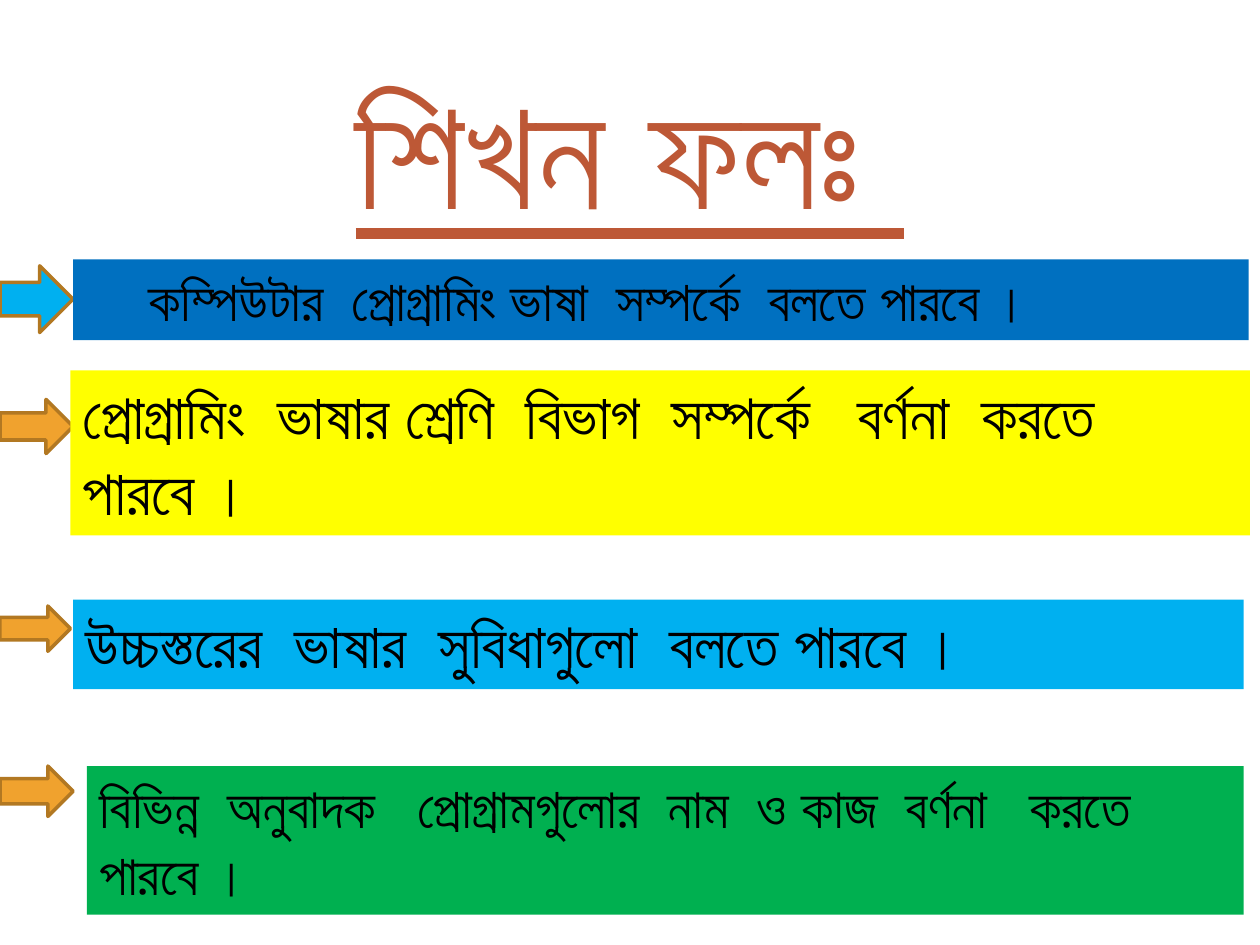
import pptx
import pptx.dml.color
import pptx.enum.shapes
import pptx.enum.text
import pptx.util

COLUMNS, ROWS = 100, 75
SLIDE_WIDTH = pptx.util.Inches(10)
SLIDE_HEIGHT = pptx.util.Inches(7.5)
ORANGE = "F0A22E"
BROWN = "B27822"
BLACK = "000000"

OUTCOMES = [
    {"arrow": (0, 21.1, 5.8, 5.3), "arrow_color": "00B0F0",
     "box": (5.8, 20.6, 93.3, 6.4), "box_color": "0070C0", "size": 32, "inset": 6,
     "runs": [("কম্পিউটার  প্রোগ্রামিং ভাষা  সম্পর্কে  বলতে ", "Roboto"), ("পারবে ।", "Lato")]},
    {"arrow": (0, 31.7, 5.8, 4.3), "arrow_color": ORANGE,
     "box": (5.6, 29.4, 93.6, 13.1), "box_color": "FFFF00", "size": 36, "inset": 1,
     "runs": [("প্রোগ্রামিং  ভাষার শ্রেণি  বিভাগ  সম্পর্কে   বর্ণনা  করতে  পারবে ।", "Roboto")]},
    {"arrow": (0, 48.1, 5.6, 3.6), "arrow_color": ORANGE,
     "box": (5.8, 47.6, 92.9, 7.1), "box_color": "00B0F0", "size": 36, "inset": 1,
     "runs": [("উচ্চস্তরের  ভাষার  সুবিধাগুলো  বলতে পারবে ।", "Roboto")]},
    {"arrow": (0, 60.8, 5.8, 4), "arrow_color": ORANGE,
     "box": (6.9, 60.8, 91.8, 11.8), "box_color": "00B050", "size": 32, "inset": 1,
     "runs": [("বিভিন্ন  অনুবাদক   প্রোগ্রামগুলোর  নাম  ও কাজ  বর্ণনা   করতে  পারবে ।", "Roboto")]},
]


def color(hex_string):
    return pptx.dml.color.RGBColor.from_string(hex_string)


def across(columns):
    return round(SLIDE_WIDTH * columns / COLUMNS)


def down(rows):
    return round(SLIDE_HEIGHT * rows / ROWS)


def place(area):
    left, top, width, height = area
    return across(left), down(top), across(width), down(height)


def add_text(paragraph, text, font="Roboto", size=32, fill=BLACK,
             bold=False, underline=False, spacing=0):
    run = paragraph.add_run()
    run.text = text
    run.font.name = font
    run.font.size = pptx.util.Pt(size)
    run.font.bold = bold
    run.font.underline = underline
    run.font.color.rgb = color(fill)
    if spacing:
        run.font._element.set("spc", str(round(spacing * 100)))


def prepare_frame(shape, alignment, inset=1):
    frame = shape.text_frame
    frame.word_wrap = True
    frame.auto_size = pptx.enum.text.MSO_AUTO_SIZE.SHAPE_TO_FIT_TEXT
    frame.vertical_anchor = pptx.enum.text.MSO_ANCHOR.TOP
    frame.margin_left = across(inset)
    paragraph = frame.paragraphs[0]
    paragraph.alignment = alignment
    return paragraph


def add_title(slide, text):
    title = slide.shapes.title
    title.left, title.top, title.width, title.height = place((0, 3.9, 100, 15.8))
    paragraph = prepare_frame(title, pptx.enum.text.PP_ALIGN.CENTER)
    add_text(paragraph, text, size=88, fill="BD5836", bold=True, underline=True, spacing=0.5)


def add_filled_shape(slide, kind, area, fill):
    shape = slide.shapes.add_shape(kind, *place(area))
    shape.shadow.inherit = False
    shape.fill.solid()
    shape.fill.fore_color.rgb = color(fill)
    return shape


def add_arrow(slide, area, fill):
    arrow = add_filled_shape(slide, pptx.enum.shapes.MSO_SHAPE.RIGHT_ARROW, area, fill)
    arrow.line.color.rgb = color(BROWN)
    arrow.line.width = pptx.util.Pt(2)


def add_box(slide, area, fill, runs, size, inset):
    box = add_filled_shape(slide, pptx.enum.shapes.MSO_SHAPE.RECTANGLE, area, fill)
    box.line.fill.background()
    paragraph = prepare_frame(box, pptx.enum.text.PP_ALIGN.LEFT, inset)
    for text, font in runs:
        add_text(paragraph, text, font=font, size=size)


def main():
    presentation = pptx.Presentation()
    presentation.slide_width = SLIDE_WIDTH
    presentation.slide_height = SLIDE_HEIGHT
    slide = presentation.slides.add_slide(presentation.slide_layouts.get_by_name("Title Only"))
    add_title(slide, "শিখন ফলঃ ")
    for outcome in OUTCOMES:
        add_arrow(slide, outcome["arrow"], outcome["arrow_color"])
        add_box(slide, outcome["box"], outcome["box_color"],
                outcome["runs"], outcome["size"], outcome["inset"])
    presentation.save("out.pptx")


if __name__ == "__main__":
    main()
